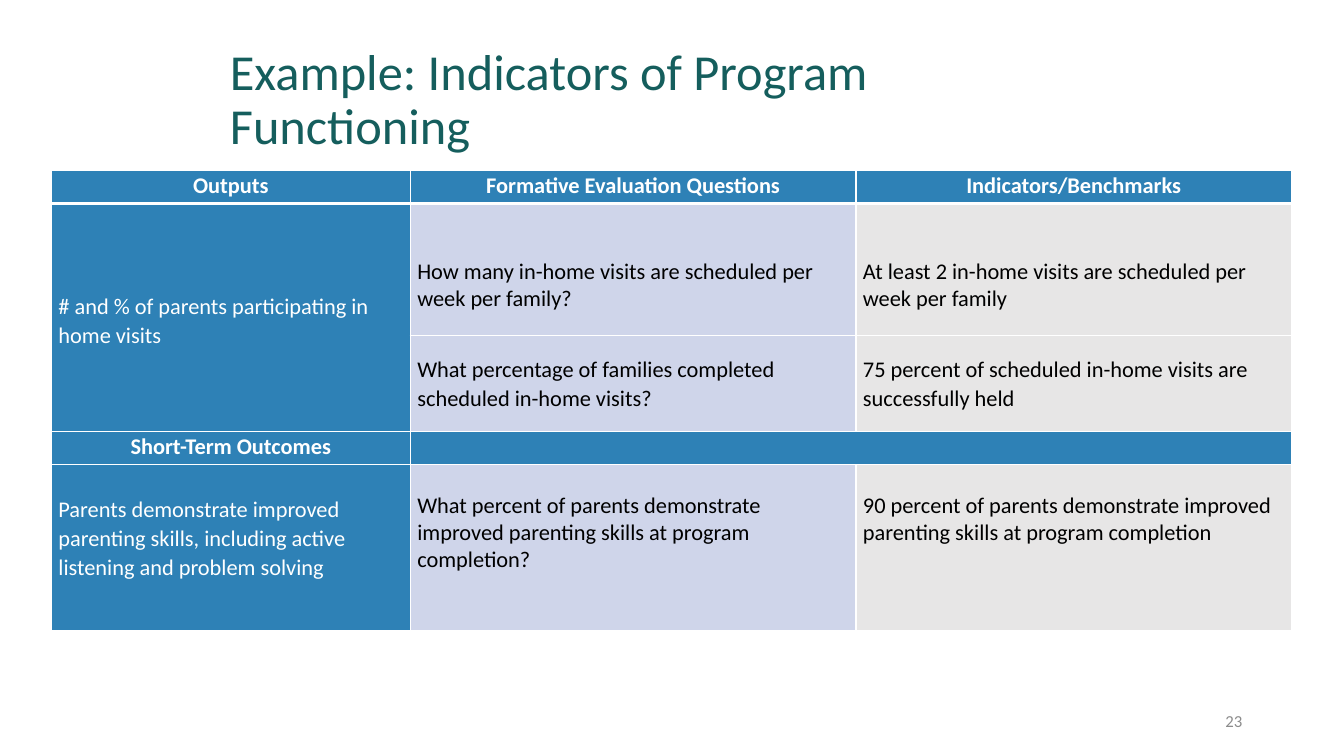
"""Build the slide with the table of program functioning indicators."""
from lxml import etree
from pptx import Presentation
from pptx.dml.color import RGBColor
from pptx.enum.text import MSO_ANCHOR as Anchor, MSO_AUTO_SIZE as AutoSize, PP_ALIGN as Align
from pptx.oxml.ns import qn
from pptx.util import Inches, Pt

WHITE = RGBColor(0xFF, 0xFF, 0xFF)
BLACK = RGBColor(0, 0, 0)
TEAL = RGBColor(0x15, 0x5E, 0x5D)
GRAY = RGBColor(0x8C, 0x8C, 0x8C)
BLUE = RGBColor(0x2E, 0x81, 0xB6)
LAVENDER = RGBColor(0xCF, 0xD5, 0xEA)
LIGHT_GRAY = RGBColor(0xE7, 0xE6, 0xE6)

FONT = "Calibri"
TITLE = "Example: Indicators of Program Functioning"
PAGE_NUMBER = "23"
ROWS = [
    ["Outputs", "Formative Evaluation Questions", "Indicators/Benchmarks"],
    ["# and % of parents participating in home visits",
     "How many in-home visits are scheduled per week per family?",
     "At least 2 in-home visits are scheduled per week per family"],
    ["", "What percentage of families completed scheduled in-home visits?",
     "75 percent of scheduled in-home visits are successfully held"],
    ["Short-Term Outcomes", "", ""],
    ["Parents demonstrate improved parenting skills, including active listening and problem solving",
     "What percent of parents demonstrate improved parenting skills at program completion?",
     "90 percent of parents demonstrate improved parenting skills at program completion"],
]
COLUMN_WIDTHS = [3.56, 4.42, 4.32]
ROW_HEIGHTS = [0.33, 1.31, 0.95, 0.33, 1.65]
COLUMN_FILLS = [BLUE, LAVENDER, LIGHT_GRAY]
HEADER_ROWS = (0, 3)
MIDDLE_ROW = 2
TOP_MARGINS = {1: (0.87, 0.54, 0.54), 4: (0.29, 0.27, 0.27)}


def format_text(text_frame, size, color, align, bold=False, spacing=1.0):
    """Format the single paragraph of a text frame."""
    paragraph = text_frame.paragraphs[0]
    paragraph.alignment = align
    paragraph.line_spacing = spacing
    for run in paragraph.runs:
        run.font.name = FONT
        run.font.size = Pt(size)
        run.font.bold = bold
        run.font.color.rgb = color


def add_borders(cell, bottom_width):
    """Give a cell white borders."""
    properties = cell._tc.get_or_add_tcPr()
    for side in "LRTB":
        width = bottom_width if side == "B" else 1
        line = etree.SubElement(properties, qn(f"a:ln{side}"), w=str(Pt(width)))
        fill = etree.SubElement(line, qn("a:solidFill"))
        etree.SubElement(fill, qn("a:srgbClr"), val=str(WHITE))


def format_cell(cell, row, column):
    """Fill and format one table cell by its place in the grid."""
    header = row in HEADER_ROWS
    cell.text_frame.text = ROWS[row][column]
    cell.margin_left = cell.margin_right = Inches(0.07)
    cell.margin_top = Inches(TOP_MARGINS.get(row, (0, 0, 0))[column])
    cell.margin_bottom = 0
    cell.vertical_anchor = Anchor.MIDDLE if row == MIDDLE_ROW else Anchor.TOP
    loose = header or column == 0 or row == MIDDLE_ROW
    format_text(cell.text_frame, 16, WHITE if header or column == 0 else BLACK,
                Align.CENTER if header else Align.LEFT, header, 1.07 if loose else 1.0)
    add_borders(cell, 3 if row == 0 else 1)
    cell.fill.solid()
    cell.fill.fore_color.rgb = BLUE if header else COLUMN_FILLS[column]


def add_indicator_table(slide):
    """Add the table of outputs, questions and benchmarks."""
    frame = slide.shapes.add_table(len(ROWS), len(COLUMN_WIDTHS), Inches(0.51), Inches(1.69),
                                   Inches(sum(COLUMN_WIDTHS)), Inches(sum(ROW_HEIGHTS)))
    table = frame.table
    table.horz_banding = False
    for column, width in zip(table.columns, COLUMN_WIDTHS):
        column.width = Inches(width)
    for row, height in zip(table.rows, ROW_HEIGHTS):
        row.height = Inches(height)
    for row in range(len(ROWS)):
        for column in range(len(COLUMN_WIDTHS)):
            format_cell(table.cell(row, column), row, column)
    table.cell(1, 0).merge(table.cell(2, 0))
    table.cell(3, 1).merge(table.cell(3, 2))


def main():
    """Create and save the presentation."""
    presentation = Presentation()
    presentation.slide_width, presentation.slide_height = Inches(13.33), Inches(7.5)
    slide = presentation.slides.add_slide(presentation.slide_layouts[5])

    title = slide.shapes.title
    title.left, title.top, title.width, title.height = map(Inches, (2.18, 0.78, 8.97, 0.45))
    title.text_frame.text = TITLE
    title.text_frame.auto_size = AutoSize.NONE
    title.text_frame.vertical_anchor = Anchor.MIDDLE
    format_text(title.text_frame, 36, TEAL, Align.LEFT, spacing=0.9)

    add_indicator_table(slide)

    number = slide.shapes.add_textbox(*map(Inches, (9.42, 6.95, 3, 0.4)))
    number.text_frame.text = PAGE_NUMBER
    number.text_frame.word_wrap = True
    number.text_frame.vertical_anchor = Anchor.MIDDLE
    format_text(number.text_frame, 12, GRAY, Align.RIGHT)

    presentation.save("out.pptx")


if __name__ == "__main__":
    main()
